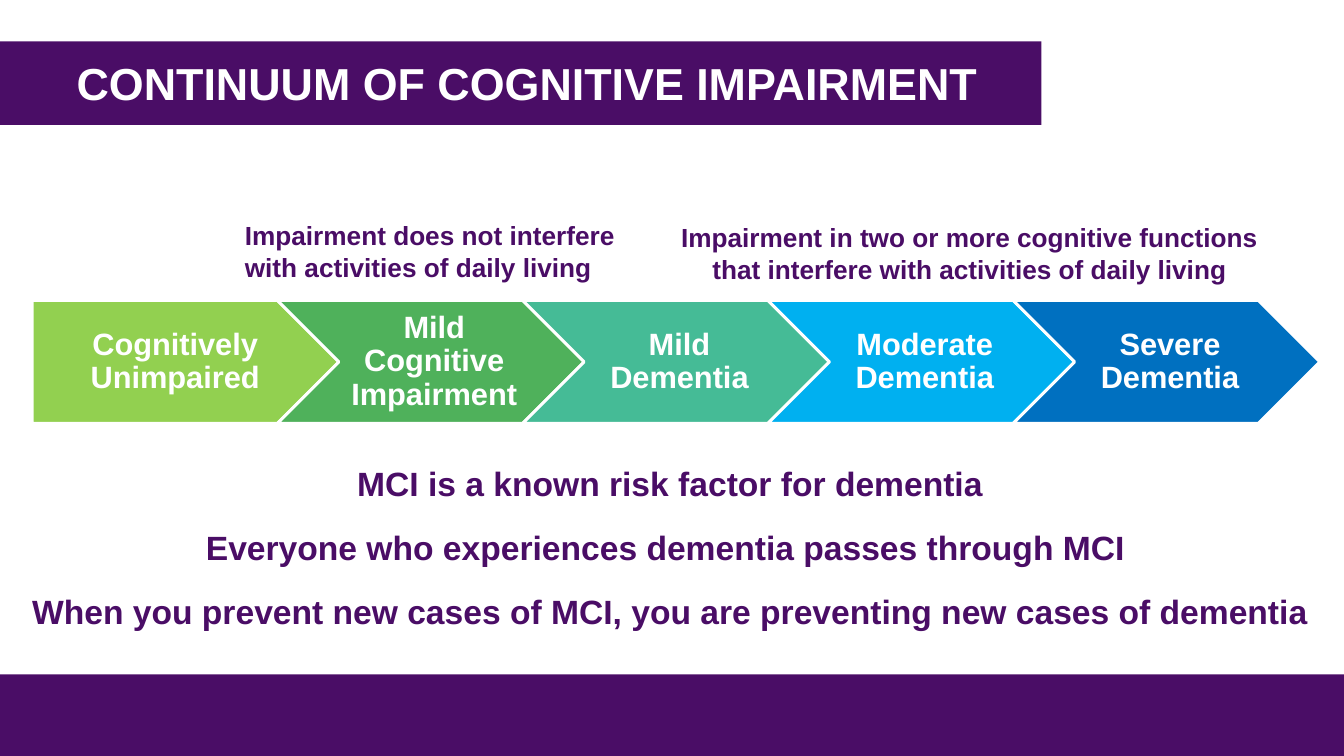
from pptx import Presentation
from pptx.dml.color import RGBColor as RGB
from pptx.enum.shapes import MSO_SHAPE as Shape
from pptx.enum.text import MSO_ANCHOR as Anchor, PP_ALIGN as Align
from pptx.util import Inches, Pt

PURPLE = RGB(0x4A, 0x0D, 0x66)
WHITE = RGB(0xFF, 0xFF, 0xFF)
LIME = RGB(0x92, 0xD0, 0x50)
GREEN = RGB(0x4F, 0xB1, 0x5B)
TEAL = RGB(0x45, 0xBB, 0x96)
SKY = RGB(0x00, 0xB0, 0xF0)
BLUE = RGB(0x00, 0x70, 0xC0)

TITLE = "CONTINUUM OF COGNITIVE IMPAIRMENT"
STAGES = [
    ("Cognitively Unimpaired", LIME),
    ("Mild Cognitive Impairment", GREEN),
    ("Mild Dementia", TEAL),
    ("Moderate Dementia", SKY),
    ("Severe Dementia", BLUE),
]
FACTS = [
    "MCI is a known risk factor for dementia",
    "Everyone who experiences dementia passes through MCI ",
    "When you prevent new cases of MCI, you are preventing new cases of dementia",
]
MILD = "Impairment does not interfere with activities of daily living"
SEVERE = ("Impairment in two or more cognitive functions "
          "that interfere with activities of daily living")


def place(box):
    return [Inches(n) for n in box]


def inset(frame, sides):
    (frame.margin_left, frame.margin_top,
     frame.margin_right, frame.margin_bottom) = place(sides)


def write(para, text, size, color, align):
    para.alignment = align
    run = para.add_run()
    run.text = text
    font = run.font
    font.name = "Arial"
    font.size = Pt(size)
    font.bold = True
    font.color.rgb = color


def add_block(slide, kind, box, fill):
    block = slide.shapes.add_shape(kind, *place(box))
    block.shadow.inherit = False
    block.fill.solid()
    block.fill.fore_color.rgb = fill
    block.line.fill.background()
    return block


def add_text(slide, box, lines, size, color=PURPLE, align=Align.CENTER, gap=0):
    frame = slide.shapes.add_textbox(*place(box)).text_frame
    frame.word_wrap = True
    for i, line in enumerate(lines):
        para = frame.add_paragraph() if i else frame.paragraphs[0]
        if i and gap:
            para.space_before = Pt(gap)
        write(para, line, size, color, align)
    return frame


def add_title(slide, box):
    left, top, width, height = box
    add_block(slide, Shape.RECTANGLE, box, PURPLE)
    area = (left + 0.76, top + 0.14, width - 1.32, height - 0.29)
    frame = add_text(slide, area, [TITLE], 32, WHITE, Align.LEFT)
    frame.word_wrap = False
    inset(frame, (0, 0, 0, 0))


def add_stages(slide, box):
    left, top, width, height = box
    step = width / (len(STAGES) + 0.25)
    for i, (text, fill) in enumerate(STAGES):
        kind = Shape.CHEVRON if i else Shape.PENTAGON
        area = (left + i * step, top, step * 1.25, height)
        stage = add_block(slide, kind, area, fill)
        stage.line.color.rgb = WHITE
        stage.line.width = Pt(2)
        frame = stage.text_frame
        frame.word_wrap = True
        frame.vertical_anchor = Anchor.MIDDLE
        inset(frame, (0.1 if i else 0.13, 0.06, 0.03, 0.06))
        para = frame.paragraphs[0]
        para.line_spacing = 0.9
        write(para, text, 22, WHITE, Align.CENTER)


def main():
    deck = Presentation()
    deck.slide_width, deck.slide_height = Inches(13.33), Inches(7.5)
    slide = deck.slides.add_slide(deck.slide_layouts[6])
    add_block(slide, Shape.RECTANGLE, (0, 6.69, 13.33, 0.81), PURPLE)
    add_stages(slide, (0.32, 2.98, 12.77, 1.22))
    add_text(slide, (0.07, 4.54, 13.15, 1.76), FACTS, 24, gap=17)
    add_text(slide, (2.33, 2.13, 4.05, 0.73), [MILD], 18.7, align=Align.LEFT)
    add_text(slide, (6.56, 2.15, 6.11, 0.73), [SEVERE], 18.7)
    add_title(slide, (0, 0.41, 10.33, 0.83))
    deck.save("out.pptx")


if __name__ == "__main__":
    main()
